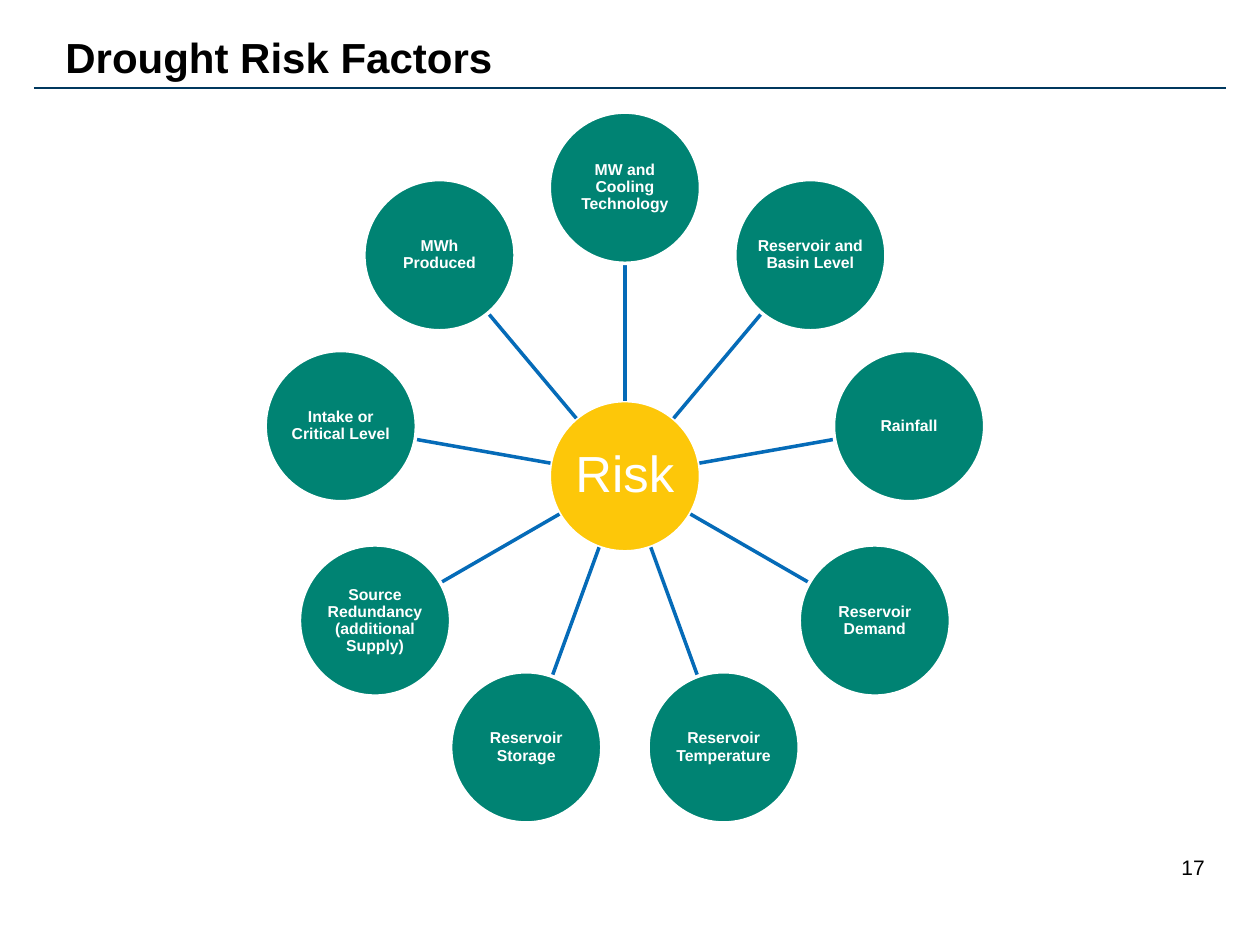
import math

from lxml import etree
from pptx import Presentation
from pptx.dml.color import RGBColor
from pptx.enum.shapes import MSO_CONNECTOR, MSO_SHAPE
from pptx.enum.text import MSO_ANCHOR, PP_ALIGN
from pptx.oxml.ns import qn
from pptx.util import Inches, Pt

STRAIGHT = MSO_CONNECTOR.STRAIGHT
OVAL = MSO_SHAPE.OVAL
MIDDLE = MSO_ANCHOR.MIDDLE
LEFT, CENTER, RIGHT = PP_ALIGN.LEFT, PP_ALIGN.CENTER, PP_ALIGN.RIGHT

COLORS = {
    "black": "000000",
    "white": "FFFFFF",
    "rule": "00385E",
    "spoke": "056BB8",
    "hub": "FDC709",
    "factor": "008373",
}
FACTORS = [
    "MW and Cooling Technology",
    "Reservoir and Basin Level",
    "Rainfall",
    "Reservoir Demand",
    "Reservoir Temperature",
    "Reservoir Storage",
    "Source Redundancy (additional Supply)",
    "Intake or Critical Level",
    "MWh Produced",
]


def color(name):
    return RGBColor.from_string(COLORS[name])


def write(sp, text, size, fill="black", bold=False, align=LEFT, inset=0.1, spacing=1.0):
    tf = sp.text_frame
    tf.word_wrap = True
    tf.vertical_anchor = MIDDLE
    tf.margin_left = tf.margin_right = Inches(inset)
    tf.margin_top = tf.margin_bottom = 0
    p = tf.paragraphs[0]
    p.alignment = align
    p.line_spacing = spacing
    r = p.add_run()
    r.text = text
    r.font.name = "Arial"
    r.font.size = Pt(size)
    r.font.bold = bold
    r.font.color.rgb = color(fill)


def add_text(s, box, text, **style):
    write(s.shapes.add_textbox(*map(Inches, box)), text, **style)


def add_line(s, start, end, fill, width):
    line = s.shapes.add_connector(STRAIGHT, *map(Inches, (*start, *end)))
    line.line.color.rgb = color(fill)
    line.line.width = Pt(width)
    etree.SubElement(line._element.spPr, qn("a:effectLst"))


def add_circle(s, center, diameter, text, fill, **style):
    x, y = (c - diameter / 2 for c in center)
    sp = s.shapes.add_shape(OVAL, *map(Inches, (x, y, diameter, diameter)))
    sp.shadow.inherit = False
    sp.fill.solid()
    sp.fill.fore_color.rgb = color(fill)
    sp.line.color.rgb = color("white")
    sp.line.width = Pt(2)
    write(sp, text, fill="white", align=CENTER, inset=0, spacing=0.9, **style)


def add_header(s, box):
    x, y, w, h = box
    add_line(s, (x, y + h), (x + w, y + h), "rule", 1.25)
    add_text(s, (x + 0.15, y, w - 0.21, h), "Drought Risk Factors", size=24, bold=True)


def add_radial(s, box, hub, factors, diameter=1.2):
    """Hub in a ring of factors, clockwise from the top; box bounds the full ring."""
    x, y, w, h = box
    center = (x + w / 2, y + h / 2)
    ring = (w - diameter) / 2

    def polar(radius, angle):
        return (center[0] + radius * math.sin(angle), center[1] - radius * math.cos(angle))

    add_circle(s, center, diameter, hub, "hub", size=29)
    for i, factor in enumerate(factors):
        angle = 2 * math.pi * i / len(factors)
        add_line(s, polar(diameter / 2, angle), polar(ring - diameter / 2, angle), "spoke", 2)
        add_circle(s, polar(ring, angle), diameter, factor, "factor", size=9, bold=True)


def main():
    prs = Presentation()
    prs.slide_width, prs.slide_height = Inches(10), Inches(7.5)
    s = prs.slides.add_slide(prs.slide_layouts[6])
    add_header(s, (0.27, 0.2, 9.46, 0.5))
    add_radial(s, (2.07, 0.89, 5.78, 5.78), "Risk", FACTORS)
    add_text(s, (7.33, 6.78, 2.33, 0.2), "17", size=12, align=RIGHT)
    prs.save("out.pptx")


if __name__ == "__main__":
    main()
